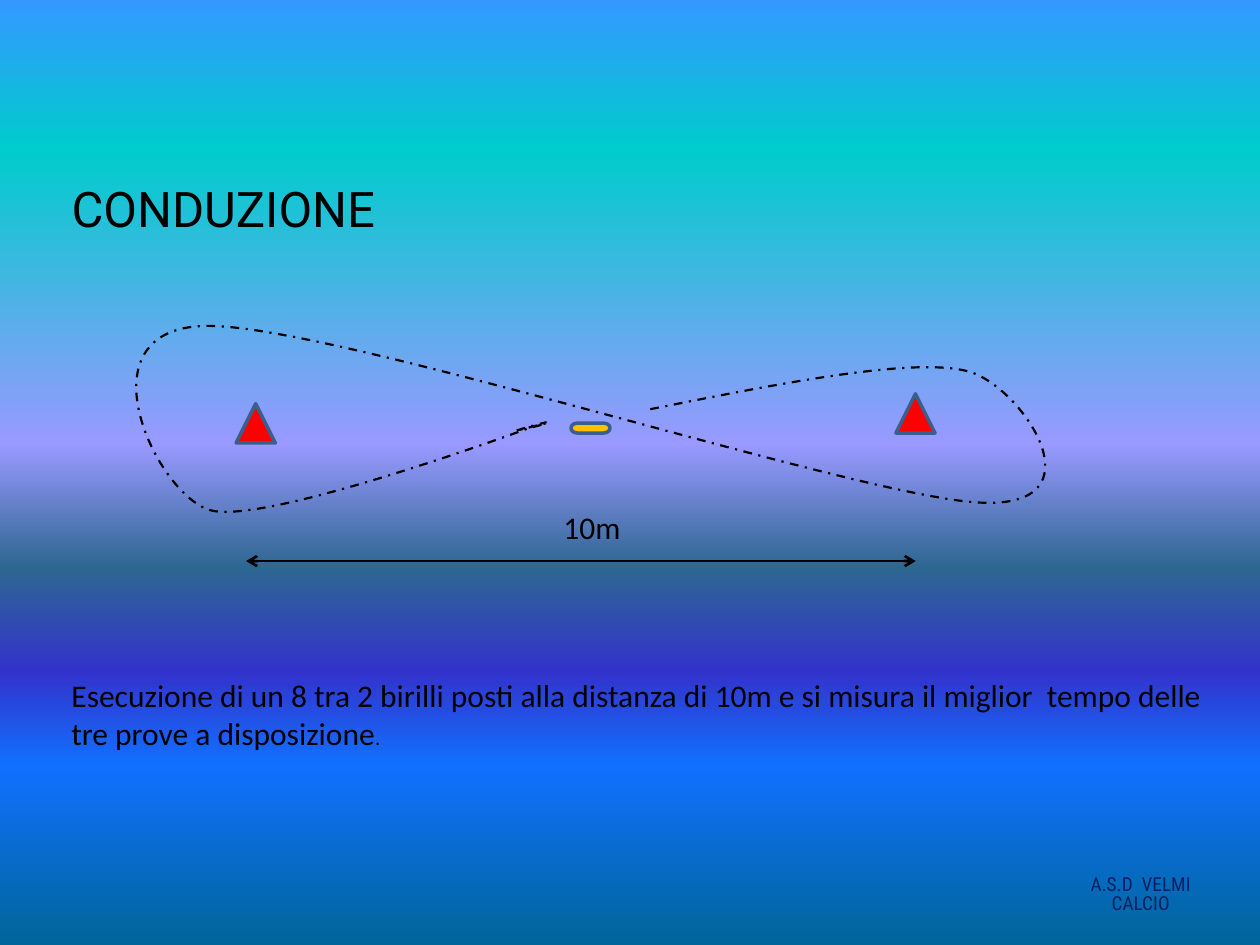
from copy import deepcopy

from lxml.etree import SubElement
from pptx import Presentation
from pptx.dml.color import RGBColor
from pptx.enum.dml import MSO_LINE
from pptx.enum.shapes import MSO_CONNECTOR, MSO_SHAPE
from pptx.enum.text import MSO_ANCHOR, MSO_AUTO_SIZE, PP_ALIGN
from pptx.oxml.ns import qn
from pptx.util import Cm, Pt

COLORS = {"ink": "000000", "club": "002060", "cone": "FF0000",
          "start": "FFC000", "outline": "3A5F8C"}
SKY = [(0, "3399FF"), (16, "00CCCC"), (47, "9999FF"), (60, "2E6792"),
       (71, "3333CC"), (81, "1170FF"), (100, "006699")]
TRACK_START = (13.11, 8.25)
TRACK_CURVES = [
    ((15.77, 7.72), (18.44, 7.19), (19.53, 7.49)),
    ((20.62, 7.8), (22.28, 10.29), (19.71, 10.13)),
    ((17.17, 9.98), (6.76, 6.55), (4.17, 6.57)),
    ((1.57, 6.6), (3.12, 9.93), (4.22, 10.28)),
    ((5.28, 10.62), (10.64, 8.64), (10.64, 8.64)),
    ((11.66, 8.36), (10.31, 8.71), (10.39, 8.69)),
    ((10.44, 8.66), (11.02, 8.51), (11.02, 8.51)),
]


class DrillSlide:
    """Draws the parts of a training drill in one style."""

    def __init__(self, slide):
        self.slide = slide
        self.shapes = slide.shapes

    def color(self, name):
        return RGBColor.from_string(COLORS[name])

    def background(self, stops):
        fill = self.slide.background.fill
        fill.gradient()
        fill.gradient_angle = 270
        stop_list = next(self.slide.element.iter(qn("a:gsLst")))
        for old in list(stop_list):
            stop_list.remove(old)
        for position, color in stops:
            stop = SubElement(stop_list, qn("a:gs"))
            stop.set("pos", str(position * 1000))
            SubElement(stop, qn("a:srgbClr")).set("val", color)

    def style(self, run, size, font, color="ink"):
        run.font.size = Pt(size)
        run.font.name = font
        run.font.color.rgb = self.color(color)

    def title(self, words, box, size, font):
        title = self.shapes.title
        title.left, title.top, title.width, title.height = map(Cm, box)
        frame = title.text_frame
        frame.text = words
        frame.vertical_anchor = MSO_ANCHOR.MIDDLE
        frame.paragraphs[0].alignment = PP_ALIGN.LEFT
        self.style(frame.paragraphs[0].runs[0], size, font)

    def text(self, words, box, size, font="Calibri", color="ink", wrap=True,
             fit=MSO_AUTO_SIZE.SHAPE_TO_FIT_TEXT):
        frame = self.shapes.add_textbox(*map(Cm, box)).text_frame
        frame.text = words
        frame.word_wrap = wrap
        frame.auto_size = fit
        self.style(frame.paragraphs[0].runs[0], size, font, color)
        return frame

    def marker(self, kind, box, color):
        marker = self.shapes.add_shape(kind, *map(Cm, box))
        marker.shadow.inherit = False
        marker.fill.solid()
        marker.fill.fore_color.rgb = self.color(color)
        marker.line.color.rgb = self.color("outline")
        marker.line.width = Pt(2)

    def distance(self, left, right, level):
        arrow = self.shapes.add_connector(
            MSO_CONNECTOR.STRAIGHT, Cm(left), Cm(level), Cm(right), Cm(level))
        arrow.line.color.rgb = self.color("ink")
        arrow.line.width = Pt(1.5)
        line = arrow.line._get_or_add_ln()
        for end in ("a:headEnd", "a:tailEnd"):
            SubElement(line, qn(end)).set("type", "arrow")
        SubElement(arrow._element.spPr, qn("a:effectLst"))

    def track(self, start, curves):
        builder = self.shapes.build_freeform(*map(Cm, start))
        points = [(Cm(x), Cm(y)) for curve in curves for x, y in curve]
        builder.add_line_segments(points, close=False)
        track = builder.convert_to_shape()
        outline = next(track._element.iter(qn("a:path")))
        segments = outline.findall(qn("a:lnTo"))
        for first in range(0, len(segments), 3):
            curve = SubElement(outline, qn("a:cubicBezTo"))
            for segment in segments[first:first + 3]:
                curve.append(deepcopy(segment[0]))
                outline.remove(segment)
        track.shadow.inherit = False
        track.fill.background()
        track.line.color.rgb = self.color("ink")
        track.line.width = Pt(1.25)
        track.line.dash_style = MSO_LINE.DASH_DOT


def main():
    deck = Presentation()
    deck.slide_width, deck.slide_height = Cm(25.4), Cm(19.05)
    drill = DrillSlide(deck.slides.add_slide(deck.slide_layouts[5]))
    drill.background(SKY)
    drill.title("CONDUZIONE", (1.19, 3.38, 22.86, 1.63), 28, "Roboto")

    club = drill.text("A.S.D  VELMI CALCIO", (21.23, 17.46, 3.53, 1.19), 11,
                      "Roboto Condensed", "club", fit=MSO_AUTO_SIZE.NONE)
    club.vertical_anchor = MSO_ANCHOR.MIDDLE
    club.paragraphs[0].alignment = PP_ALIGN.CENTER
    club.paragraphs[0].line_spacing = 0.8

    for left, top in ((4.76, 8.14), (18.06, 7.94)):
        drill.marker(MSO_SHAPE.ISOSCELES_TRIANGLE, (left, top, 0.79, 0.79), "cone")
    drill.marker(MSO_SHAPE.FLOWCHART_TERMINATOR, (11.51, 8.53, 0.79, 0.2), "start")
    drill.distance(4.96, 18.46, 11.31)
    drill.text("10m", (11.11, 10.12, 1.68, 1.03), 18, wrap=False)
    drill.track(TRACK_START, TRACK_CURVES)

    rules = drill.text(
        "Esecuzione di un 8 tra 2 birilli posti alla distanza di 10m e si misura "
        "il miglior  tempo delle tre prove a disposizione",
        (1.19, 13.5, 23.42, 1.8), 18)
    full_stop = rules.paragraphs[0].add_run()
    full_stop.text = "."
    drill.style(full_stop, 12, "Calibri")
    deck.save("out.pptx")


if __name__ == "__main__":
    main()
